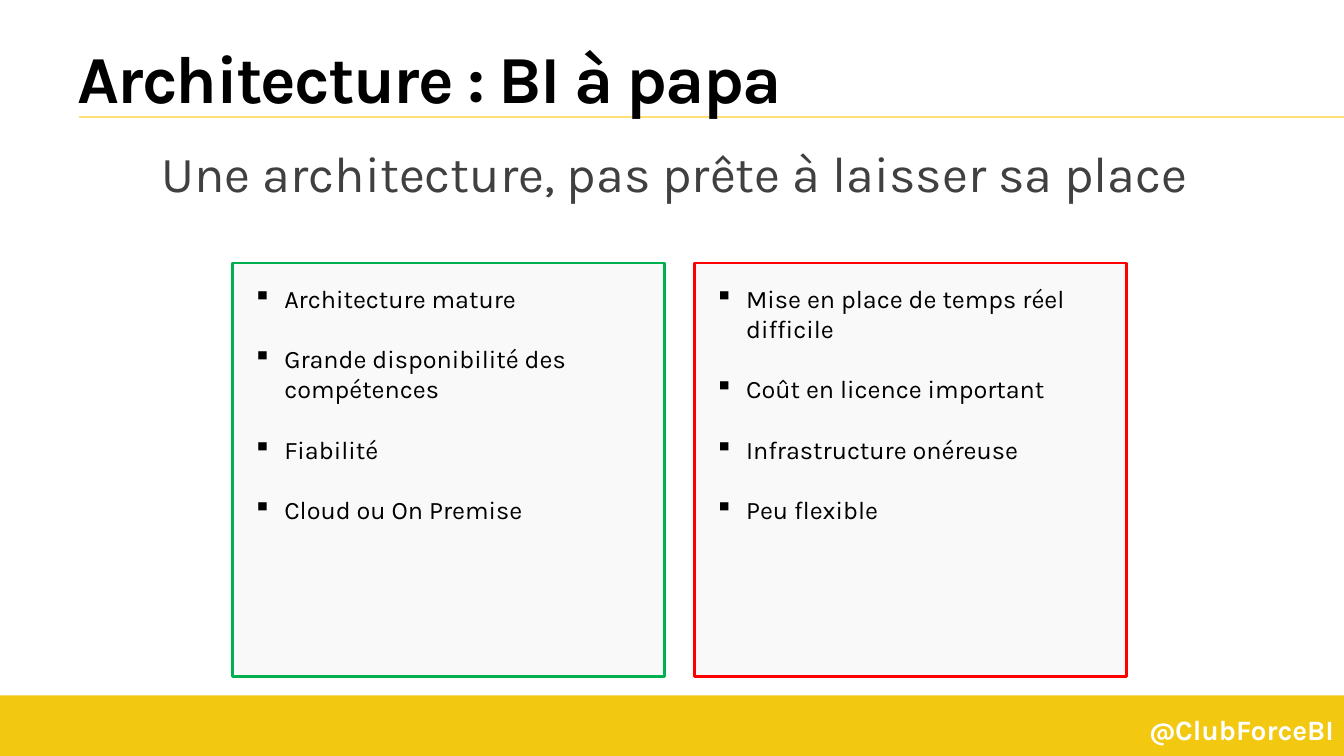
from dataclasses import dataclass

from lxml.etree import SubElement
from pptx import Presentation
from pptx.dml.color import RGBColor
from pptx.enum.shapes import MSO_CONNECTOR, MSO_SHAPE
from pptx.enum.text import MSO_ANCHOR, PP_ALIGN
from pptx.oxml.ns import qn
from pptx.util import Inches, Pt

TITLE = "Architecture : BI à papa"
SUBTITLE = "Une architecture, pas prête à laisser sa place"
HANDLE = [("@", 18), ("ClubForceBI", 20)]
CARDS = [
    ("00B050", ["Architecture mature", "Grande disponibilité des compétences",
                "Fiabilité", "Cloud ou On Premise"]),
    ("FF0000", ["Mise en place de temps réel difficile", "Coût en licence important",
                "Infrastructure onéreuse", "Peu flexible"]),
]


@dataclass(frozen=True)
class Theme:
    font: str = "Karla"
    black: str = "000000"
    gray: str = "404040"
    white: str = "FFFFFF"
    yellow: str = "F2C811"
    rule: str = "FFDF79"
    card: str = "F9F9F9"
    title_size: float = 48
    subtitle_size: float = 36
    body_size: float = 18
    item_gap: float = 21.5


THEME = Theme()
WIDTH, HEIGHT = 13.33, 7.5
FOOTER_HEIGHT = 0.08 * HEIGHT
CARD_LEFT, CARD_TOP, CARD_WIDTH, CARD_HEIGHT = 2.31, 2.61, 4.28, 4.1
CARD_STEP = CARD_WIDTH + 0.3
CARD_INSET, BULLET_INDENT = 0.2, 0.31


def color(code):
    return RGBColor.from_string(code)


def style(font, code, size=None, bold=False):
    font.name, font.bold = THEME.font, bold
    font.color.rgb = color(code)
    if size:
        font.size = Pt(size)


def add_box(page, left, top, width, height, wrap=True):
    box = page.shapes.add_textbox(*map(Inches, (left, top, width, height)))
    box.text_frame.word_wrap = wrap
    return box.text_frame


def add_rectangle(page, left, top, width, height, fill, line=None):
    shape = page.shapes.add_shape(
        MSO_SHAPE.RECTANGLE, *map(Inches, (left, top, width, height)))
    shape.shadow.inherit = False
    shape.fill.solid()
    shape.fill.fore_color.rgb = color(fill)
    if line:
        shape.line.color.rgb = color(line)
        shape.line.width = Pt(2)
    else:
        shape.line.fill.background()
    return shape


def add_bullet(para):
    properties = para._p.get_or_add_pPr()
    properties.set("marL", str(Inches(BULLET_INDENT)))
    properties.set("indent", str(-Inches(BULLET_INDENT)))
    SubElement(properties, qn("a:buChar")).set("char", "▪")


def add_card(page, left, line, items):
    frame = add_rectangle(page, left, CARD_TOP, CARD_WIDTH, CARD_HEIGHT,
                          THEME.card, line).text_frame
    frame.word_wrap = True
    frame.vertical_anchor = MSO_ANCHOR.TOP
    frame.margin_left = frame.margin_right = Inches(CARD_INSET)
    frame.margin_top = frame.margin_bottom = Inches(CARD_INSET)
    for index, item in enumerate(items):
        para = frame.add_paragraph() if index else frame.paragraphs[0]
        para.text = item
        para.alignment = PP_ALIGN.LEFT
        if index:
            para.space_before = Pt(THEME.item_gap)
        add_bullet(para)
        style(para.font, THEME.black, THEME.body_size)


def add_footer(page):
    add_rectangle(page, 0, HEIGHT - FOOTER_HEIGHT, WIDTH, FOOTER_HEIGHT, THEME.yellow)
    para = add_box(page, WIDTH - 2.14, 7.02, 2.14, 0.44, wrap=False).paragraphs[0]
    para.alignment = PP_ALIGN.RIGHT
    style(para.font, THEME.white, bold=True)
    for text, size in HANDLE:
        span = para.add_run()
        span.text = text
        span.font.size = Pt(size)


def add_heading(page):
    rule = page.shapes.add_connector(
        MSO_CONNECTOR.STRAIGHT, *map(Inches, (0.78, 1.16, WIDTH, 1.16)))
    rule.line.color.rgb = color(THEME.rule)
    rule.line.width = Pt(1.5)
    SubElement(rule._element.spPr, qn("a:effectLst"))

    title = add_box(page, 0.67, 0.3, 12, 0.93)
    title.vertical_anchor = MSO_ANCHOR.MIDDLE
    para = title.paragraphs[0]
    para.text = TITLE
    style(para.font, THEME.black, THEME.title_size, bold=True)
    para.runs[0].font._element.set("spc", "-130")

    subtitle = add_box(page, 0.67, 1.23, 12.22, 5.69)
    subtitle.margin_top, subtitle.margin_right = Inches(0.18), Inches(0.27)
    para = subtitle.paragraphs[0]
    para.text = SUBTITLE
    para.alignment = PP_ALIGN.CENTER
    style(para.font, THEME.gray, THEME.subtitle_size)


def main():
    deck = Presentation()
    deck.slide_width, deck.slide_height = Inches(WIDTH), Inches(HEIGHT)
    page = deck.slides.add_slide(deck.slide_layouts[6])
    add_footer(page)
    for index, (line, items) in enumerate(CARDS):
        add_card(page, CARD_LEFT + index * CARD_STEP, line, items)
    add_heading(page)
    deck.save("out.pptx")


if __name__ == "__main__":
    main()
